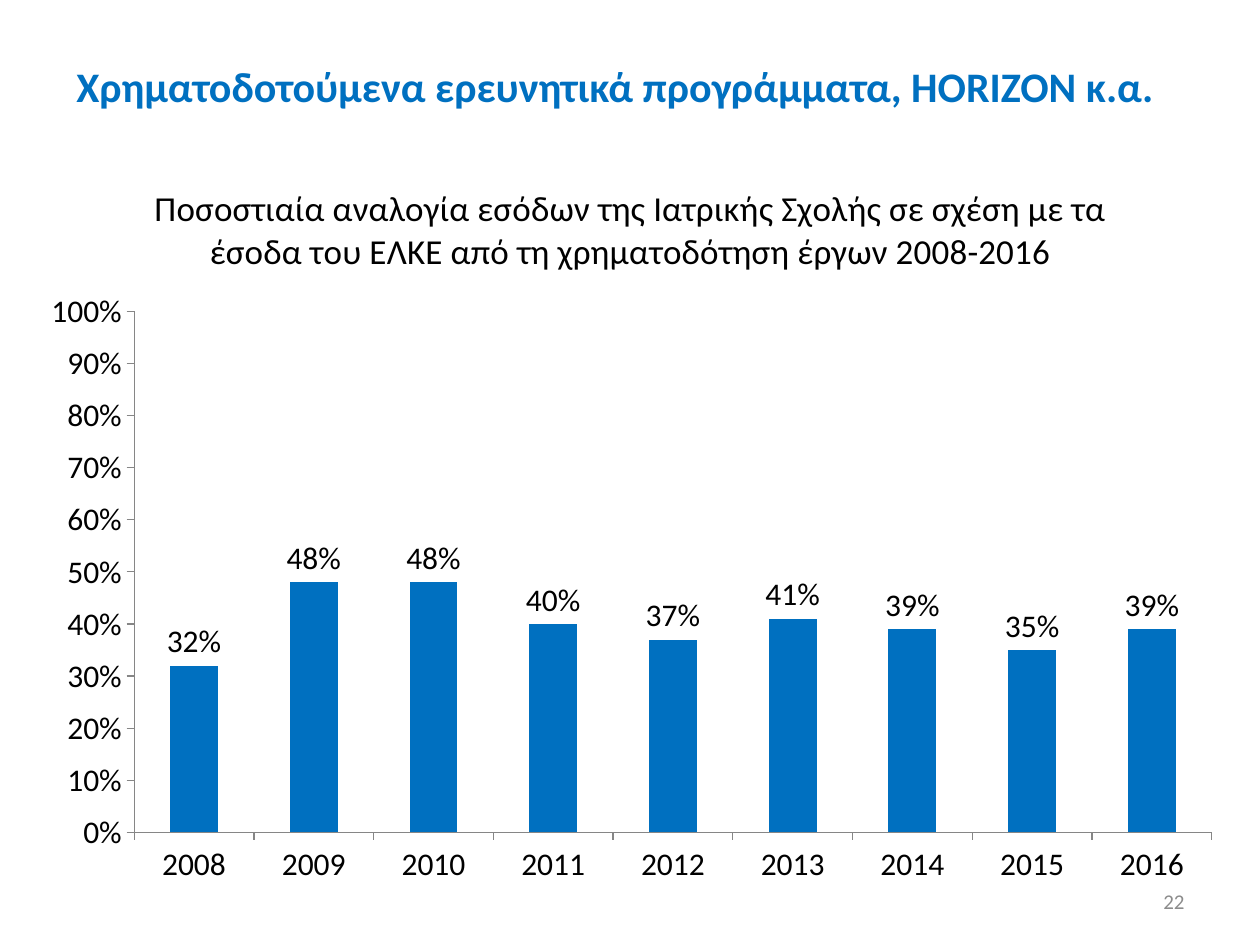
from lxml.etree import SubElement
from pptx import Presentation
from pptx.chart.data import CategoryChartData
from pptx.dml.color import RGBColor
from pptx.enum.chart import XL_CHART_TYPE as ChartType, XL_LABEL_POSITION as LabelPosition, XL_TICK_MARK as TickMark
from pptx.enum.text import MSO_ANCHOR as Anchor, PP_ALIGN as Align
from pptx.oxml.ns import qn
from pptx.util import Inches, Pt

BLUE, BLACK, GREY, AXIS_GREY = "0070C0", "000000", "8C8C8C", "868686"


def style(font, size, color, bold=False):
    font.name = "Calibri"
    font.size = Pt(size)
    font.bold = bold
    font.color.rgb = RGBColor.from_string(color)


def add_text(box, text, align, anchor, size, color, bold=False):
    frame = slide.shapes.add_textbox(*map(Inches, box)).text_frame
    frame.word_wrap = True
    frame.vertical_anchor = anchor
    line = frame.paragraphs[0]
    line.text = text
    line.alignment = align
    style(line.runs[0].font, size, color, bold)


deck = Presentation()
deck.slide_width, deck.slide_height = Inches(10), Inches(7.5)
slide = deck.slides.add_slide(deck.slide_layouts[6])

add_text((0.39, 0.43, 8.98, 0.5), "Χρηματοδοτούμενα ερευνητικά προγράμματα, HORIZON κ.α.",
         Align.CENTER, Anchor.TOP, 24, BLUE, True)

income_share = CategoryChartData(number_format="0%")
income_share.categories = [str(year) for year in range(2008, 2017)]
income_share.add_series("Series 1", (0.32, 0.48, 0.48, 0.4, 0.37, 0.41, 0.39, 0.35, 0.39))
chart = slide.shapes.add_chart(ChartType.COLUMN_CLUSTERED, Inches(0.2), Inches(1.23),
                               Inches(9.61), Inches(5.91), income_share).chart
style(chart.font, 18, BLACK)
chart.has_legend = False
chart.has_title = True
heading = chart.chart_title.text_frame
heading.text = ("Ποσοστιαία αναλογία εσόδων της Ιατρικής Σχολής σε σχέση με τα "
                "έσοδα του ΕΛΚΕ από τη χρηματοδότηση έργων 2008-2016")
style(heading.paragraphs[0].runs[0].font, 20, BLACK)
chart.chart_title.include_in_layout = False

for axis in (chart.category_axis, chart.value_axis):
    axis.has_major_gridlines = False
    axis.major_tick_mark = TickMark.OUTSIDE
    axis.format.line.color.rgb = RGBColor.from_string(AXIS_GREY)
    axis.format.line.width = Pt(0.75)
    style(axis.tick_labels.font, 18, BLACK)
percent = chart.value_axis
percent.minimum_scale, percent.maximum_scale, percent.major_unit = 0, 1, 0.1
percent.tick_labels.number_format = "0%"
percent.tick_labels.number_format_is_linked = False

columns = chart.plots[0]
columns.gap_width = 150
columns.vary_by_categories = False
share = columns.series[0]
share.format.fill.solid()
share.format.fill.fore_color.rgb = RGBColor.from_string(BLUE)
columns.has_data_labels = True
labels = columns.data_labels
labels.show_value = True
labels.number_format = "0%"
labels.number_format_is_linked = False
labels.position = LabelPosition.OUTSIDE_END
style(labels.font, 18, BLACK)

plot_area = chart._chartSpace.chart.plotArea
for old_layout in plot_area.findall(qn("c:layout")):
    plot_area.remove(old_layout)
layout = plot_area.makeelement(qn("c:layout"))
plot_area.insert(0, layout)
manual = SubElement(layout, qn("c:manualLayout"))
for tag, value in (("layoutTarget", "inner"), ("xMode", "edge"), ("yMode", "edge"),
                   ("x", "0.09"), ("y", "0.21"), ("w", "0.89"), ("h", "0.7")):
    SubElement(manual, qn(f"c:{tag}")).set("val", value)

add_text((7.17, 6.95, 2.33, 0.4), "22", Align.RIGHT, Anchor.MIDDLE, 12, GREY)

deck.save("out.pptx")
